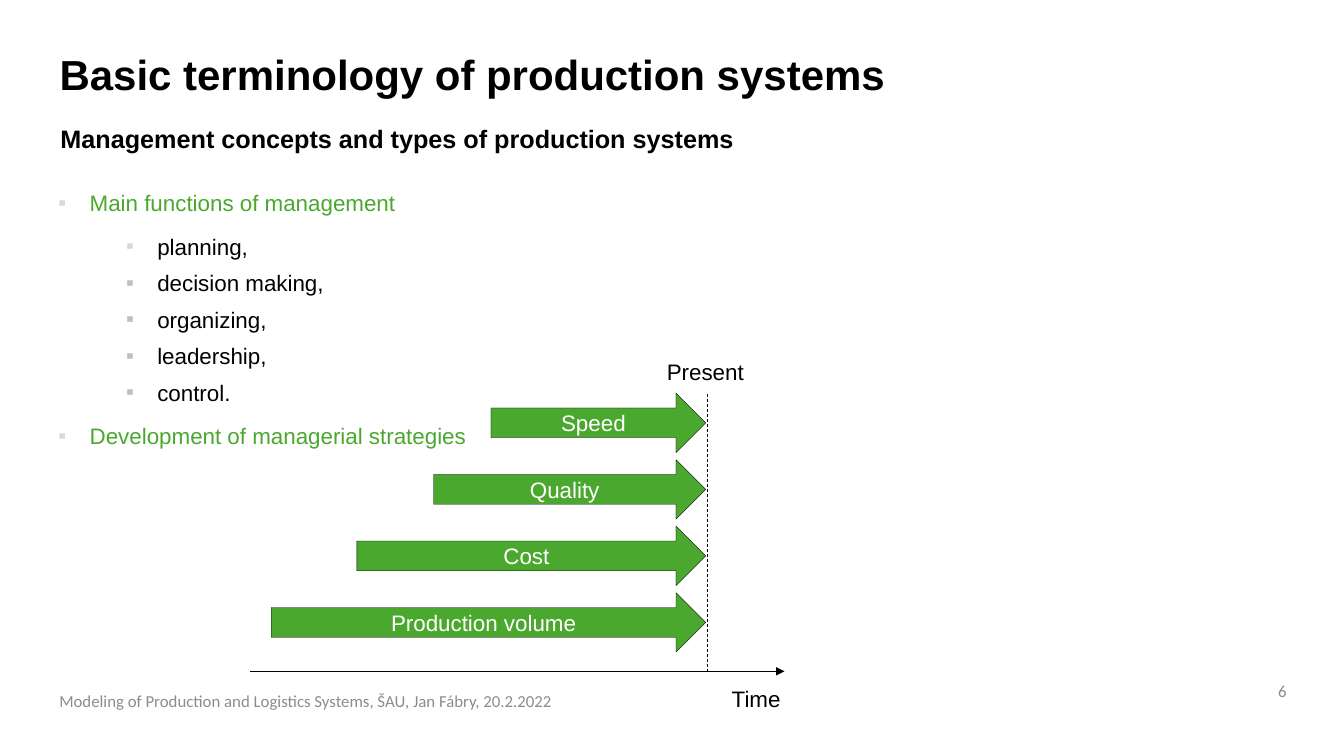
from dataclasses import dataclass, field

import pptx
import pptx.dml.color
import pptx.enum.dml
import pptx.enum.shapes
import pptx.enum.text
import pptx.oxml
import pptx.oxml.ns
import pptx.util
from pptx.util import Inches

RGBColor = pptx.dml.color.RGBColor
Pt = pptx.util.Pt
Align = pptx.enum.text.PP_ALIGN
Anchor = pptx.enum.text.MSO_ANCHOR

BLACK = RGBColor(0x00, 0x00, 0x00)
WHITE = RGBColor(0xFF, 0xFF, 0xFF)
GREEN = RGBColor(0x4B, 0xA8, 0x2E)
GREY = RGBColor(0x8C, 0x8C, 0x8C)
LIGHT_BULLET = RGBColor(0xD9, 0xD9, 0xD9)
DARK_BULLET = RGBColor(0xBF, 0xBF, 0xBF)


@dataclass(frozen=True)
class Box:
    left: float
    top: float
    width: float
    height: float

    def lengths(self) -> list:
        return [Inches(v) for v in (self.left, self.top, self.width, self.height)]


@dataclass(frozen=True)
class Label:
    text: str
    box: Box
    size: float = 16
    font: str = "Arial"
    color: RGBColor = BLACK
    bold: bool = False
    align: Align = Align.LEFT
    anchor: Anchor = Anchor.MIDDLE
    wrap: bool = False
    spacing: float = 1.0
    margins: dict = field(default_factory=dict)


@dataclass(frozen=True)
class ListItem:
    text: str
    color: RGBColor = BLACK
    bullet_color: RGBColor = DARK_BULLET
    indent: float = 0.98
    space_before: float = 5
    level: int = 1


@dataclass(frozen=True)
class Strategy:
    text: str
    left: float


@dataclass(frozen=True)
class Line:
    start: tuple
    end: tuple
    dashed: bool = False
    arrow: bool = False


TITLE = Label("Basic terminology of production systems", Box(0.49, 0.49, 10.13, 0.57),
              size=30, bold=True, anchor=Anchor.TOP, wrap=True, spacing=0.9)
SUBTITLE = Label("Management concepts and types of production systems",
                 Box(0.5, 1.17, 10.11, 0.4), size=18, bold=True,
                 anchor=Anchor.TOP, wrap=True)
LIST_BOX = Box(0.48, 1.8, 5.5, 4.12)
ITEMS = [
    ListItem("Main functions of management", GREEN, LIGHT_BULLET, 0.31, 0, 0),
    ListItem("planning,", bullet_color=LIGHT_BULLET, space_before=10, level=0),
    ListItem("decision making,"),
    ListItem("organizing,"),
    ListItem("leadership,"),
    ListItem("control."),
    ListItem("Development of managerial strategies", GREEN, LIGHT_BULLET, 0.31, 10, 0),
]
LABELS = [
    Label("Modeling of Production and Logistics Systems, ŠAU, Jan Fábry, 20.2.2022",
          Box(0.49, 6.75, 7.17, 0.4), 12, "Calibri", GREY, wrap=True),
    Label("6", Box(12.51, 6.69, 0.35, 0.33), 12, "Calibri", GREY, align=Align.RIGHT),
    Label("Present", Box(6.45, 3.47, 1.09, 0.44), align=Align.CENTER),
    Label("Time", Box(7.23, 6.71, 0.54, 0.44), align=Align.CENTER),
]
STRATEGIES = [Strategy("Speed", 4.87), Strategy("Quality", 4.3),
              Strategy("Cost", 3.54), Strategy("Production volume", 2.69)]
ARROW_TOP, ARROW_PITCH, ARROW_HEIGHT, ARROW_TIP = 3.9, 0.66, 0.59, 7.0
ARROW_MARGINS = {"margin_left": Inches(0.05), "margin_right": 0,
                 "margin_top": 0, "margin_bottom": 0}
LINES = [Line((2.48, 6.66), (7.78, 6.66), arrow=True),
         Line((7.02, 3.91), (7.02, 6.66), dashed=True)]


def apply(target: object, formats: dict) -> None:
    for name, value in formats.items():
        setattr(target, name, value)


def place(shape, box: Box) -> None:
    apply(shape, dict(zip(("left", "top", "width", "height"), box.lengths())))


def add_element(parent, tag: str, **attributes: str):
    element = pptx.oxml.parse_xml(f"<{tag} {pptx.oxml.ns.nsdecls('a')}/>")
    for name, value in attributes.items():
        element.set(name, value)
    parent.append(element)
    return element


def write_label(shape, label: Label) -> None:
    frame = shape.text_frame
    apply(frame, {"text": label.text, "word_wrap": label.wrap,
                  "auto_size": pptx.enum.text.MSO_AUTO_SIZE.NONE,
                  "vertical_anchor": label.anchor, **label.margins})
    paragraph = frame.paragraphs[0]
    apply(paragraph, {"alignment": label.align, "line_spacing": label.spacing,
                      "space_before": Pt(0)})
    apply(paragraph.font, {"size": Pt(label.size), "name": label.font, "bold": label.bold})
    paragraph.font.color.rgb = label.color


def write_list(shape, items: list[ListItem]) -> None:
    frame = shape.text_frame
    apply(frame, {"auto_size": pptx.enum.text.MSO_AUTO_SIZE.NONE, "word_wrap": True})
    for index, item in enumerate(items):
        paragraph = frame.add_paragraph() if index else frame.paragraphs[0]
        apply(paragraph, {"text": item.text, "level": item.level, "line_spacing": 1.1,
                          "space_before": Pt(item.space_before)})
        properties = paragraph._p.get_or_add_pPr()
        properties.set("marL", str(Inches(item.indent)))
        properties.set("indent", str(Inches(-0.31)))
        bullet_color = add_element(properties, "a:buClr")
        add_element(bullet_color, "a:srgbClr", val=str(item.bullet_color))
        add_element(properties, "a:buFont", typeface="Arial")
        add_element(properties, "a:buChar", char="▪")
        apply(paragraph.font, {"size": Pt(16), "name": "Arial"})
        paragraph.font.color.rgb = item.color


def add_strategy(slide, strategy: Strategy, row: int) -> None:
    box = Box(strategy.left, ARROW_TOP + row * ARROW_PITCH,
              ARROW_TIP - strategy.left, ARROW_HEIGHT)
    arrow = slide.shapes.add_shape(pptx.enum.shapes.MSO_SHAPE.RIGHT_ARROW, *box.lengths())
    arrow.shadow.inherit = False
    arrow.fill.solid()
    arrow.fill.fore_color.rgb = GREEN
    arrow.line.color.rgb = BLACK
    arrow.line.width = Pt(0.25)
    write_label(arrow, Label(strategy.text, box, color=WHITE, align=Align.CENTER,
                             wrap=True, margins=ARROW_MARGINS))


def add_line(slide, line: Line) -> None:
    connector = slide.shapes.add_connector(
        pptx.enum.shapes.MSO_CONNECTOR.STRAIGHT,
        *(Inches(value) for value in line.start + line.end))
    connector.line.color.rgb = BLACK
    connector.line.width = Pt(0.5)
    if line.dashed:
        connector.line.dash_style = pptx.enum.dml.MSO_LINE.DASH
    if line.arrow:
        add_element(connector.line._get_or_add_ln(), "a:tailEnd", type="triangle")
    add_element(connector._element.spPr, "a:effectLst")


def main() -> None:
    presentation = pptx.Presentation()
    presentation.slide_width = Inches(13.33)
    presentation.slide_height = Inches(7.5)
    slide = presentation.slides.add_slide(presentation.slide_layouts[3])

    # Headings and list
    title, subtitle, body = list(slide.placeholders)[:3]
    for shape, label in ((title, TITLE), (subtitle, SUBTITLE)):
        place(shape, label.box)
        write_label(shape, label)
    properties = subtitle.text_frame.paragraphs[0]._p.get_or_add_pPr()
    properties.set("marL", "0")
    properties.set("indent", "0")
    properties.insert_element_before(
        pptx.oxml.parse_xml(f"<a:buNone {pptx.oxml.ns.nsdecls('a')}/>"), "a:defRPr")
    place(body, LIST_BOX)
    write_list(body, ITEMS)

    # Strategy timeline
    for row, strategy in enumerate(STRATEGIES):
        add_strategy(slide, strategy, row)
    for line in LINES:
        add_line(slide, line)

    # Axis labels, footer and page number
    for label in LABELS:
        write_label(slide.shapes.add_textbox(*label.box.lengths()), label)

    presentation.save("out.pptx")


if __name__ == "__main__":
    main()
